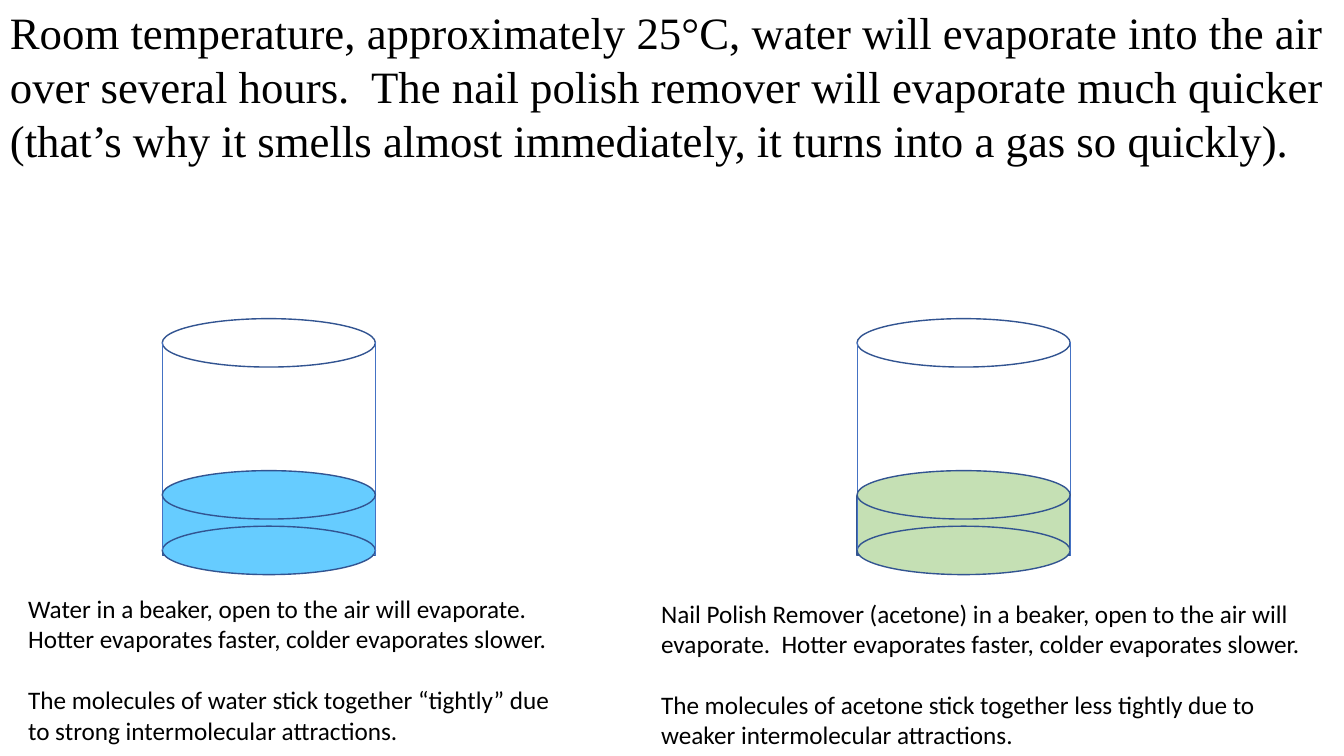
"""Build a slide comparing evaporation of water and nail polish remover."""
from lxml import etree
from pptx import Presentation
from pptx.dml.color import RGBColor
from pptx.enum import shapes, text
from pptx.oxml import ns
from pptx.util import Cm, Pt

BLACK = RGBColor(0x00, 0x00, 0x00)
OUTLINE = RGBColor(0x32, 0x54, 0x91)
GLASS = RGBColor(0x44, 0x72, 0xC4)
WATER = RGBColor(0x66, 0xCC, 0xFF)
ACETONE = RGBColor(0xC5, 0xE0, 0xB4)

OVAL = shapes.MSO_SHAPE.OVAL
RECTANGLE = shapes.MSO_SHAPE.RECTANGLE
BEAKER_WIDTH = 5.37
RIM_HEIGHT = 1.22

deck = Presentation()
deck.slide_width, deck.slide_height = Cm(33.87), Cm(19.05)
slide = deck.slides.add_slide(deck.slide_layouts[6])


def add_part(kind, left, top, height, liquid=None):
    part = slide.shapes.add_shape(kind, Cm(left), Cm(top), Cm(BEAKER_WIDTH), Cm(height))
    part.shadow.inherit = False
    part.line.color.rgb = OUTLINE
    part.line.width = Pt(1)
    if liquid is None:
        part.fill.background()
    else:
        part.fill.solid()
        part.fill.fore_color.rgb = liquid


def add_words(left, top, width, height, paragraphs, font, size):
    box = slide.shapes.add_textbox(Cm(left), Cm(top), Cm(width), Cm(height))
    frame = box.text_frame
    frame.word_wrap = True
    frame.auto_size = text.MSO_AUTO_SIZE.SHAPE_TO_FIT_TEXT
    for index, words in enumerate(paragraphs):
        paragraph = frame.add_paragraph() if index else frame.paragraphs[0]
        if index:
            paragraph.space_before = Pt(22)
        run = paragraph.add_run()
        run.text = words
        run.font.name = font
        run.font.size = Pt(size)
        run.font.color.rgb = BLACK


beakers = [
    (4.09, WATER, (0.46, 14.83, 14.25, 4.11), [
        "Water in a beaker, open to the air will evaporate.  "
        "Hotter evaporates faster, colder evaporates slower.",
        "The molecules of water stick together “tightly” due to "
        "strong intermolecular attractions."]),
    (21.6, ACETONE, (16.41, 14.94, 17.45, 4.11), [
        "Nail Polish Remover (acetone) in a beaker, open to the air will "
        "evaporate.  Hotter evaporates faster, colder evaporates slower.",
        "The molecules of acetone stick together less tightly due to "
        "weaker intermolecular attractions."]),
]

for left, liquid, caption_area, caption in beakers:
    add_part(OVAL, left, 8.03, RIM_HEIGHT)
    add_part(RECTANGLE, left, 12.5, 1.5, liquid)
    add_part(OVAL, left, 13.26, RIM_HEIGHT, liquid)
    for x, bottom in ((left, 13.87), (left + BEAKER_WIDTH, 14)):
        wall = slide.shapes.add_connector(
            shapes.MSO_CONNECTOR.STRAIGHT, Cm(x), Cm(8.61), Cm(x), Cm(bottom))
        wall.line.color.rgb = GLASS
        wall.line.width = Pt(0.5)
        etree.SubElement(wall._element.spPr, ns.qn("a:effectLst"))
    add_part(OVAL, left, 11.86, RIM_HEIGHT, liquid)
    add_words(*caption_area, caption, "Calibri", 18)

add_words(0, 0, 33.87, 4.37, [
    "Room temperature, approximately 25°C, water will evaporate into the air "
    "over several hours.  The nail polish remover will evaporate much quicker "
    "(that’s why it smells almost immediately, it turns into a gas so quickly)."],
    "Times New Roman", 32)

deck.save("out.pptx")
